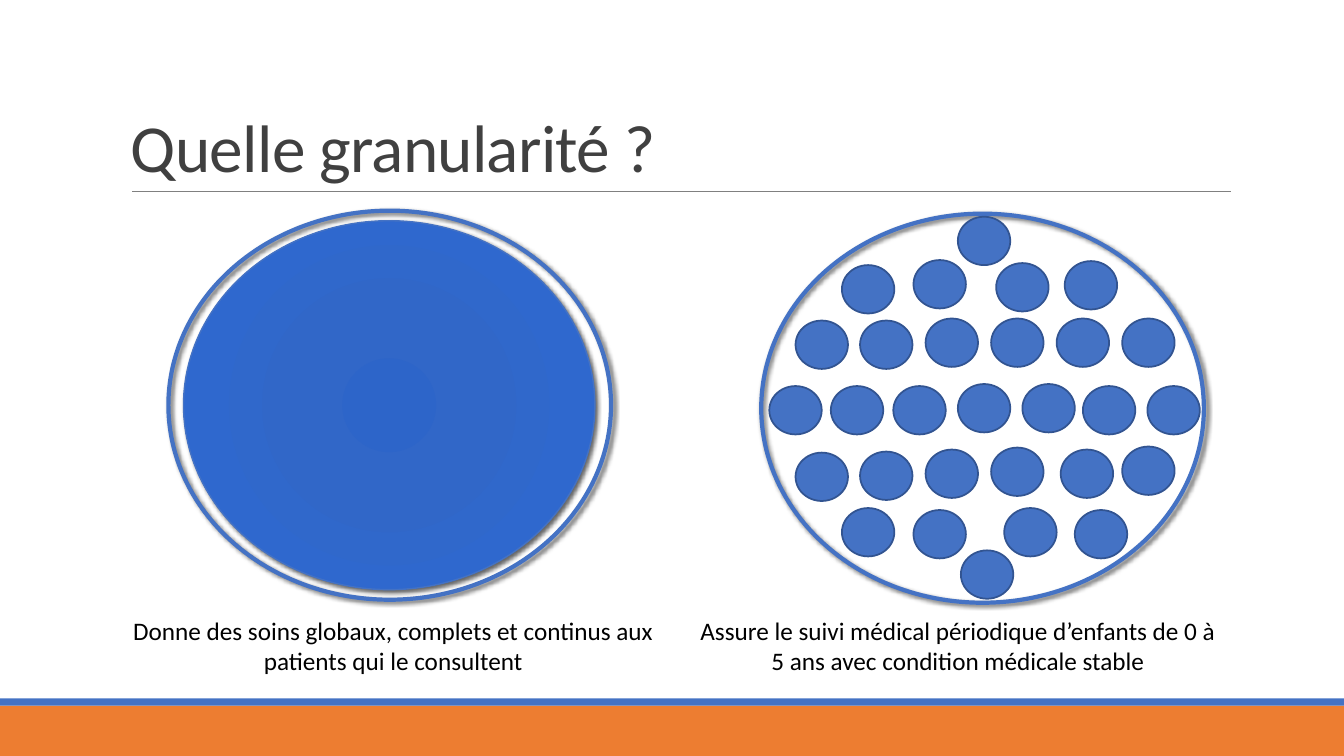
from lxml.etree import SubElement
from pptx import Presentation
from pptx.dml.color import RGBColor
from pptx.enum.shapes import MSO_CONNECTOR, MSO_SHAPE
from pptx.enum.text import MSO_ANCHOR, PP_ALIGN
from pptx.oxml import parse_xml
from pptx.oxml.ns import nsdecls, qn
from pptx.util import Inches, Pt

HUES = {
    "blue": "4472C4",
    "edge": "325491",
    "orange": "ED7D31",
    "rule": "808080",
    "title": "404040",
    "black": "000000",
}
BLEND = [(0, "2D65C9"), (34, "3167C8"), (70, "2F68CE"), (100, "3E70CA")]
DOT = (0.52, 0.48)
# Left and top of each small dot, row by row
ROWS = [
    [(9.5, 2.15)],
    [(8.35, 2.63), (9.06, 2.58), (9.88, 2.61), (10.56, 2.59)],
    [(7.89, 3.18), (8.53, 3.18), (9.18, 3.16), (9.83, 3.16),
     (10.48, 3.16), (11.13, 3.16)],
    [(7.63, 3.83), (8.24, 3.83), (8.86, 3.83), (9.5, 3.81),
     (10.14, 3.81), (10.74, 3.83), (11.38, 3.83)],
    [(7.89, 4.49), (8.53, 4.48), (9.18, 4.46), (9.83, 4.44),
     (10.52, 4.46), (11.13, 4.43)],
    [(8.35, 5.04), (9.06, 5.06), (9.96, 5.04), (10.66, 5.06)],
    [(9.53, 5.46)],
]
NOTES = [
    (1.2, "Donne des soins globaux, complets et continus aux patients "
          "qui le consultent"),
    (6.8, "Assure le suivi médical périodique d’enfants de 0 à 5 ans "
          "avec condition médicale stable"),
]


def rgb(name):
    return RGBColor.from_string(HUES[name])


def apply(item, values):
    for key, value in values.items():
        setattr(item, key, value)


def add_form(slide, kind, box, fill=None, line=None, width=1):
    form = slide.shapes.add_shape(kind, *map(Inches, box))
    form.shadow.inherit = False
    if fill:
        form.fill.solid()
        form.fill.fore_color.rgb = rgb(fill)
    else:
        form.fill.background()
    if line:
        form.line.color.rgb = rgb(line)
        form.line.width = Pt(width)
    else:
        form.line.fill.background()
    return form


def add_shade(form):
    """Give the shape a soft shadow to the lower right."""
    effects = form._element.spPr.find(qn("a:effectLst"))
    shade = SubElement(effects, qn("a:outerShdw"), blurRad=str(Pt(3)),
                       dist=str(Pt(2)), dir="2700000", algn="tl",
                       rotWithShape="0")
    hue = SubElement(shade, qn("a:srgbClr"), val=HUES["black"])
    SubElement(hue, qn("a:alpha"), val="60000")


def add_blend(form):
    """Fill the shape with the round blue gradient."""
    stops = "".join(
        f'<a:gs pos="{spot * 1000}"><a:srgbClr val="{hue}"/></a:gs>'
        for spot, hue in BLEND)
    blend = parse_xml(
        f'<a:gradFill {nsdecls("a")} rotWithShape="1">'
        f'<a:gsLst>{stops}</a:gsLst><a:path path="circle">'
        '<a:fillToRect l="100000" t="100000" r="100000" b="100000"/>'
        '</a:path></a:gradFill>')
    props = form._element.spPr
    props.replace(props.find(qn("a:noFill")), blend)


def add_disc(slide, box, width):
    disc = add_form(slide, MSO_SHAPE.OVAL, box, line="blue", width=width)
    add_shade(disc)
    return disc


def add_rule(slide, start, end):
    rule = slide.shapes.add_connector(
        MSO_CONNECTOR.STRAIGHT, *map(Inches, start + end))
    rule.line.color.rgb = rgb("rule")
    rule.line.width = Pt(0.5)
    SubElement(rule._element.spPr, qn("a:effectLst"))


def add_text(slide, box, text, size, hue, frame, para):
    area = slide.shapes.add_textbox(*map(Inches, box)).text_frame
    apply(area, {"word_wrap": True, **frame})
    line = area.paragraphs[0]
    apply(line, para)
    run = line.add_run()
    run.text = text
    apply(run.font, {"name": "Calibri", "size": Pt(size)})
    run.font.color.rgb = rgb(hue)
    return run


def main():
    deck = Presentation()
    apply(deck, {"slide_width": Inches(13.33), "slide_height": Inches(7.5)})
    slide = deck.slides.add_slide(deck.slide_layouts[6])

    add_form(slide, MSO_SHAPE.RECTANGLE, (0, 7, 13.33, 0.5), "orange")
    add_form(slide, MSO_SHAPE.RECTANGLE, (0, 6.93, 13.33, 0.07), "blue")
    add_rule(slide, (1.31, 1.9), (12.21, 1.9))
    title = add_text(slide, (1.2, 0.31, 11, 1.59), "Quelle granularité ?",
                     48, "title", {"vertical_anchor": MSO_ANCHOR.BOTTOM},
                     {"line_spacing": 0.85})
    title.font._element.set("spc", "-50")

    add_disc(slide, (7.55, 2.12, 4.39, 3.86), 3)
    add_disc(slide, (1.67, 2.09, 4.39, 3.86), 3)
    add_blend(add_disc(slide, (1.82, 2.19, 4.08, 3.66), 1))

    for left, note in NOTES:
        add_text(slide, (left, 6.05, 5.4, 0.71), note, 18, "black", {},
                 {"alignment": PP_ALIGN.CENTER})
    for row in ROWS:
        for spot in row:
            add_form(slide, MSO_SHAPE.OVAL, spot + DOT, "blue", "edge", 1.25)

    deck.save("out.pptx")


if __name__ == "__main__":
    main()
